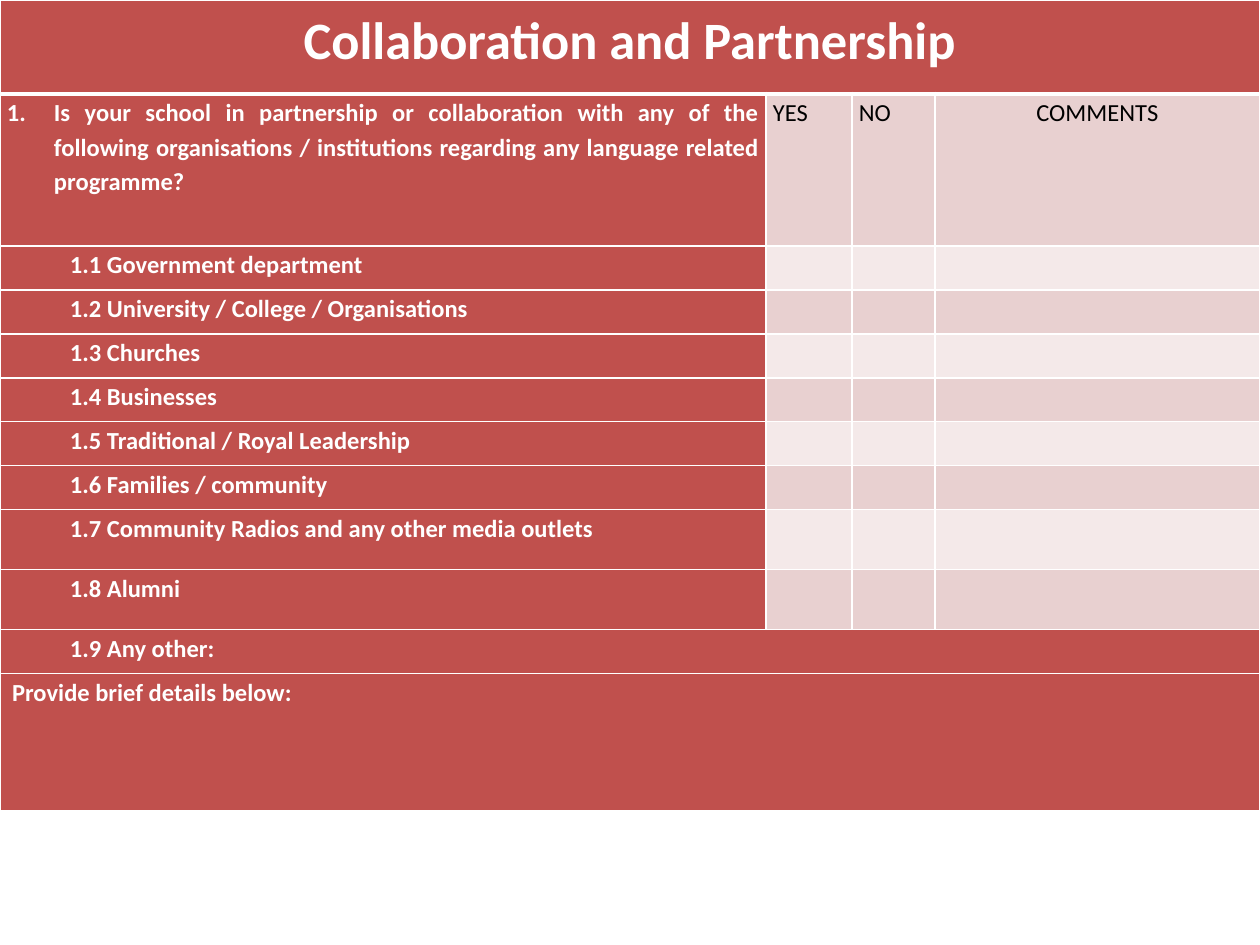
from lxml import etree
from pptx import Presentation
from pptx.dml.color import RGBColor
from pptx.enum.text import PP_ALIGN
from pptx.oxml.ns import qn
from pptx.util import Emu, Pt

PX = 914400 // 126
LEFT, CENTER, JUSTIFY = PP_ALIGN.LEFT, PP_ALIGN.CENTER, PP_ALIGN.JUSTIFY

WHITE = RGBColor(0xFF, 0xFF, 0xFF)
BLACK = RGBColor(0x00, 0x00, 0x00)
RED = RGBColor(0xC0, 0x50, 0x4D)
PINK = RGBColor(0xE8, 0xD0, 0xD0)
PALE = RGBColor(0xF4, 0xE9, 0xE9)

TITLE = "Collaboration and Partnership"
QUESTION = (
    "Is your school in partnership or collaboration with any of the following "
    "organisations / institutions regarding any language related programme?"
)
ANSWERS = [("YES", LEFT), ("NO", LEFT), ("COMMENTS", CENTER)]
PARTNERS = [
    "1.1 Government department",
    "1.2 University / College / Organisations",
    "1.3 Churches",
    "1.4 Businesses",
    "1.5 Traditional / Royal Leadership",
    "1.6 Families / community",
    "1.7 Community Radios and any other media outlets",
    "1.8 Alumni",
]
OTHER = "1.9 Any other:"
DETAILS = "Provide brief details below:"

COLUMN_WIDTHS = [766, 86, 83, 325]
ROW_HEIGHTS = [94, 152] + [44] * 6 + [60] * 2 + [44, 137]


def px(length):
    return Emu(length * PX)


def set_borders(cell, top=1, bottom=1):
    properties = cell._tc.get_or_add_tcPr()
    widths = {"a:lnL": 1, "a:lnR": 1, "a:lnT": top, "a:lnB": bottom}
    for position, (side, width) in enumerate(widths.items()):
        line = etree.Element(qn(side), w=str(Pt(width)))
        fill = etree.SubElement(line, qn("a:solidFill"))
        etree.SubElement(fill, qn("a:srgbClr"), val=str(WHITE))
        properties.insert(position, line)


def fill_cell(cell, text, fill, color=WHITE, bold=True, size=14,
              align=LEFT, indent=0, hanging=0, level=0):
    cell.margin_left = cell.margin_right = px(7)
    cell.margin_top = cell.margin_bottom = 0
    cell.fill.solid()
    cell.fill.fore_color.rgb = fill
    cell.text_frame.text = text
    paragraph = cell.text_frame.paragraphs[0]
    properties = paragraph._p.get_or_add_pPr()
    properties.set("marL", str(px(indent)))
    properties.set("indent", str(px(-hanging)))
    if hanging:
        etree.SubElement(properties, qn("a:buFont"), typeface="+mj-lt")
        etree.SubElement(properties, qn("a:buAutoNum"), type="arabicPeriod")
    paragraph.level = level
    paragraph.alignment = align
    paragraph.line_spacing = 1.15
    for font in [paragraph.font] + [run.font for run in paragraph.runs]:
        font.name = "Calibri"
        font.size = Pt(size)
        font.bold = bold
        font.color.rgb = color


def fill_wide_row(table, row, text, **style):
    table.cell(row, 0).merge(table.cell(row, len(COLUMN_WIDTHS) - 1))
    fill_cell(table.cell(row, 0), text, RED, **style)


def add_survey(slide, left, top, width, height):
    table = slide.shapes.add_table(
        len(ROW_HEIGHTS), len(COLUMN_WIDTHS),
        px(left), px(top), px(width), px(height),
    ).table
    for column, column_width in zip(table.columns, COLUMN_WIDTHS):
        column.width = px(column_width)
    for row, row_height in zip(table.rows, ROW_HEIGHTS):
        row.height = px(row_height)

    fill_wide_row(table, 0, TITLE, size=30, align=CENTER)

    fill_cell(table.cell(1, 0), QUESTION, RED, align=JUSTIFY,
              indent=47, hanging=47)
    for column, (answer, align) in enumerate(ANSWERS, 1):
        fill_cell(table.cell(1, column), answer, PINK, color=BLACK,
                  bold=False, align=align)

    for row, partner in enumerate(PARTNERS, 2):
        fill_cell(table.cell(row, 0), partner, RED, align=JUSTIFY,
                  indent=63, level=1)
        for column in range(1, len(COLUMN_WIDTHS)):
            fill_cell(table.cell(row, column), "", PINK if row % 2 else PALE,
                      color=BLACK, bold=False)

    other_row = 2 + len(PARTNERS)
    fill_wide_row(table, other_row, OTHER, indent=63, level=1)
    fill_wide_row(table, other_row + 1, DETAILS, indent=5)

    for row in range(len(ROW_HEIGHTS)):
        for column in range(len(COLUMN_WIDTHS)):
            set_borders(table.cell(row, column),
                        top=3 if row == 1 else 1,
                        bottom=3 if row == 0 else 1)


def main():
    deck = Presentation()
    deck.slide_width, deck.slide_height = px(1260), px(945)
    slide = deck.slides.add_slide(deck.slide_layouts[6])
    add_survey(slide, 0, 0, sum(COLUMN_WIDTHS), sum(ROW_HEIGHTS))
    deck.save("out.pptx")


if __name__ == "__main__":
    main()
